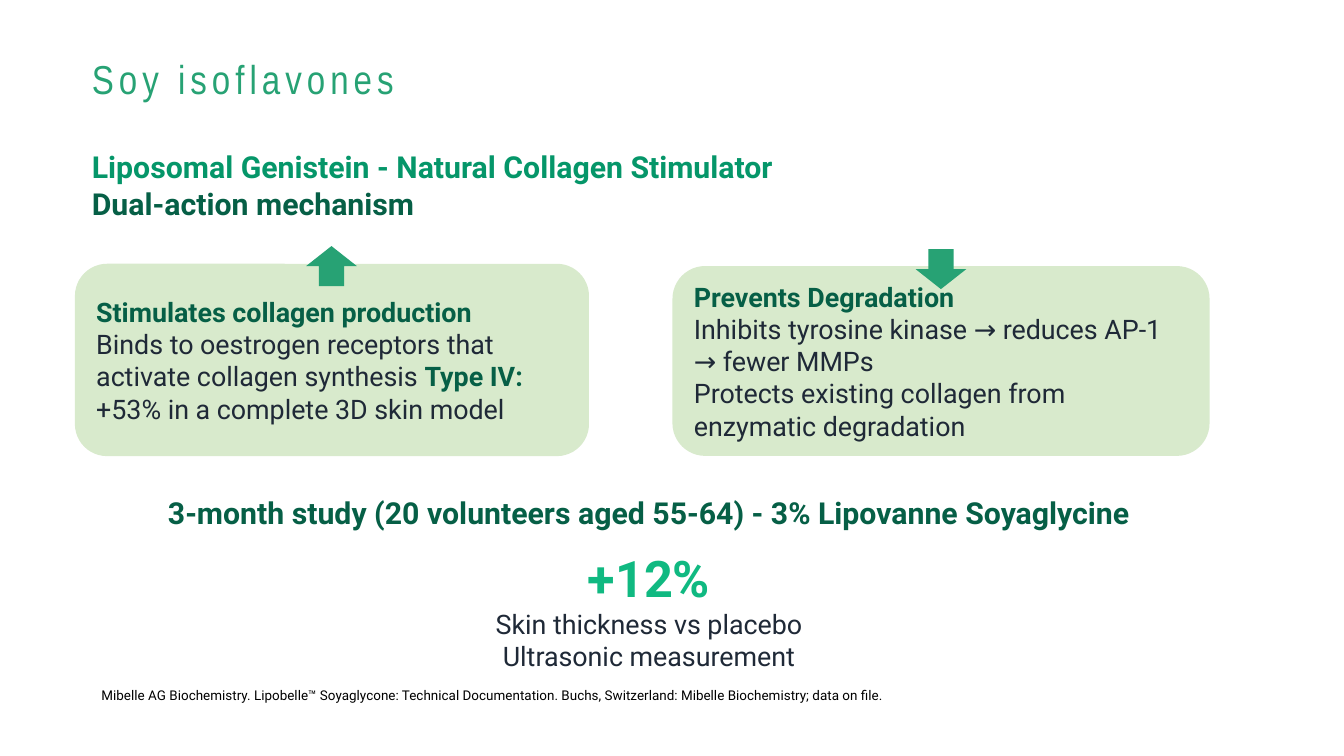
from pptx import Presentation
from pptx.dml.color import RGBColor
from pptx.enum.shapes import MSO_SHAPE
from pptx.enum.text import MSO_ANCHOR, PP_ALIGN
from pptx.util import Pt

DARK_GREEN = "065F46"
MID_GREEN = "27A274"
PALE_GREEN = "D8EACC"
INK = "1F2937"


def color(hex_code):
    return RGBColor.from_string(hex_code)


def style_run(run, size, hex_code, bold=False, font="Roboto"):
    run.font.name = font
    run.font.size = Pt(size)
    run.font.bold = bold
    run.font.color.rgb = color(hex_code)


def write_paragraphs(frame, paragraphs, align=PP_ALIGN.LEFT):
    """Fill a frame; each paragraph is a list of (text, size, colour, bold)."""
    frame.word_wrap = True
    for index, pieces in enumerate(paragraphs):
        paragraph = frame.add_paragraph() if index else frame.paragraphs[0]
        paragraph.alignment = align
        for text, size, hex_code, bold in pieces:
            run = paragraph.add_run()
            run.text = text
            style_run(run, size, hex_code, bold)


def set_margins(frame, left, top, right, bottom):
    frame.margin_left, frame.margin_top = Pt(left), Pt(top)
    frame.margin_right, frame.margin_bottom = Pt(right), Pt(bottom)


def add_title(slide, text):
    title = slide.shapes.title
    title.left, title.top, title.width, title.height = Pt(54.7), Pt(35.3), Pt(215.3), Pt(25.9)
    title.fill.solid()
    title.fill.fore_color.rgb = color("FFFFFF")
    frame = title.text_frame
    frame.text = text
    frame.vertical_anchor = MSO_ANCHOR.MIDDLE
    set_margins(frame, 0, 0, 0, 0)
    paragraph = frame.paragraphs[0]
    paragraph.alignment = PP_ALIGN.LEFT
    paragraph.line_spacing = 0.9
    run = paragraph.runs[0]
    style_run(run, 24, MID_GREEN, font="Arial Narrow")
    run.font._element.set("spc", "300")


def add_text(slide, left, top, width, height, paragraphs, align=PP_ALIGN.LEFT):
    box = slide.shapes.add_textbox(Pt(left), Pt(top), Pt(width), Pt(height))
    write_paragraphs(box.text_frame, paragraphs, align)
    return box.text_frame


def add_filled_shape(slide, kind, left, top, width, height, fill):
    shape = slide.shapes.add_shape(kind, Pt(left), Pt(top), Pt(width), Pt(height))
    shape.shadow.inherit = False
    shape.fill.solid()
    shape.fill.fore_color.rgb = color(fill)
    shape.line.fill.background()
    return shape


def add_card(slide, left, top, width, height, paragraphs, corner=0.167):
    card = add_filled_shape(slide, MSO_SHAPE.ROUNDED_RECTANGLE, left, top, width, height, PALE_GREEN)
    card.adjustments[0] = corner
    card.text_frame.vertical_anchor = MSO_ANCHOR.MIDDLE
    write_paragraphs(card.text_frame, paragraphs)


def add_arrow(slide, kind, left, top):
    add_filled_shape(slide, kind, left, top, 30.2, 23.8, MID_GREEN)


def main():
    deck = Presentation()
    deck.slide_width, deck.slide_height = Pt(800), Pt(450)
    slide = deck.slides.add_slide(deck.slide_layouts[5])

    add_title(slide, "Soy isoflavones")
    heading = add_text(slide, 54.7, 87.8, 645, 43.9, [
        [("Liposomal Genistein - Natural Collagen Stimulator", 18, "059669", True)],
        [("Dual-action mechanism", 18, DARK_GREEN, True)],
    ])
    set_margins(heading, 0, 0.7, 0, 0)

    add_card(slide, 44.6, 157, 306, 114.5, [
        [("Stimulates collagen production", 16, DARK_GREEN, True)],
        [("Binds to oestrogen receptors that activate collagen synthesis ", 16, INK, False),
         ("Type IV: ", 16, DARK_GREEN, True),
         ("+53% in a complete 3D skin model", 16, INK, False)],
    ])
    add_card(slide, 400.3, 158.4, 319.7, 113, [
        [("Prevents Degradation", 16, DARK_GREEN, True)],
        [("Inhibits tyrosine kinase → reduces AP-1 → fewer MMPs", 16, INK, False)],
        [("Protects existing collagen from enzymatic degradation", 16, INK, False)],
    ], corner=0.172)
    add_arrow(slide, MSO_SHAPE.UP_ARROW, 182.2, 146.5)
    add_arrow(slide, MSO_SHAPE.DOWN_ARROW, 545, 148.3)

    study = add_text(slide, 53.3, 290.9, 666, 152.6, [
        [("3-month study (20 volunteers aged 55-64) - 3% Lipovanne Soyaglycine", 18, DARK_GREEN, True)],
        [("+12%", 30, "10B981", True)],
        [("Skin thickness vs placebo", 16, INK, False)],
        [("Ultrasonic measurement", 16, INK, False)],
        [("Mibelle AG Biochemistry. Lipobelle™ Soyaglycone: Technical Documentation. "
          "Buchs, Switzerland: Mibelle Biochemistry; data on file.", 8, "000000", False)],
    ], PP_ALIGN.CENTER)
    result, reference = study.paragraphs[1], study.paragraphs[-1]
    result.space_before = reference.space_before = Pt(9.4)
    reference.alignment = PP_ALIGN.LEFT

    deck.save("out.pptx")


if __name__ == "__main__":
    main()
